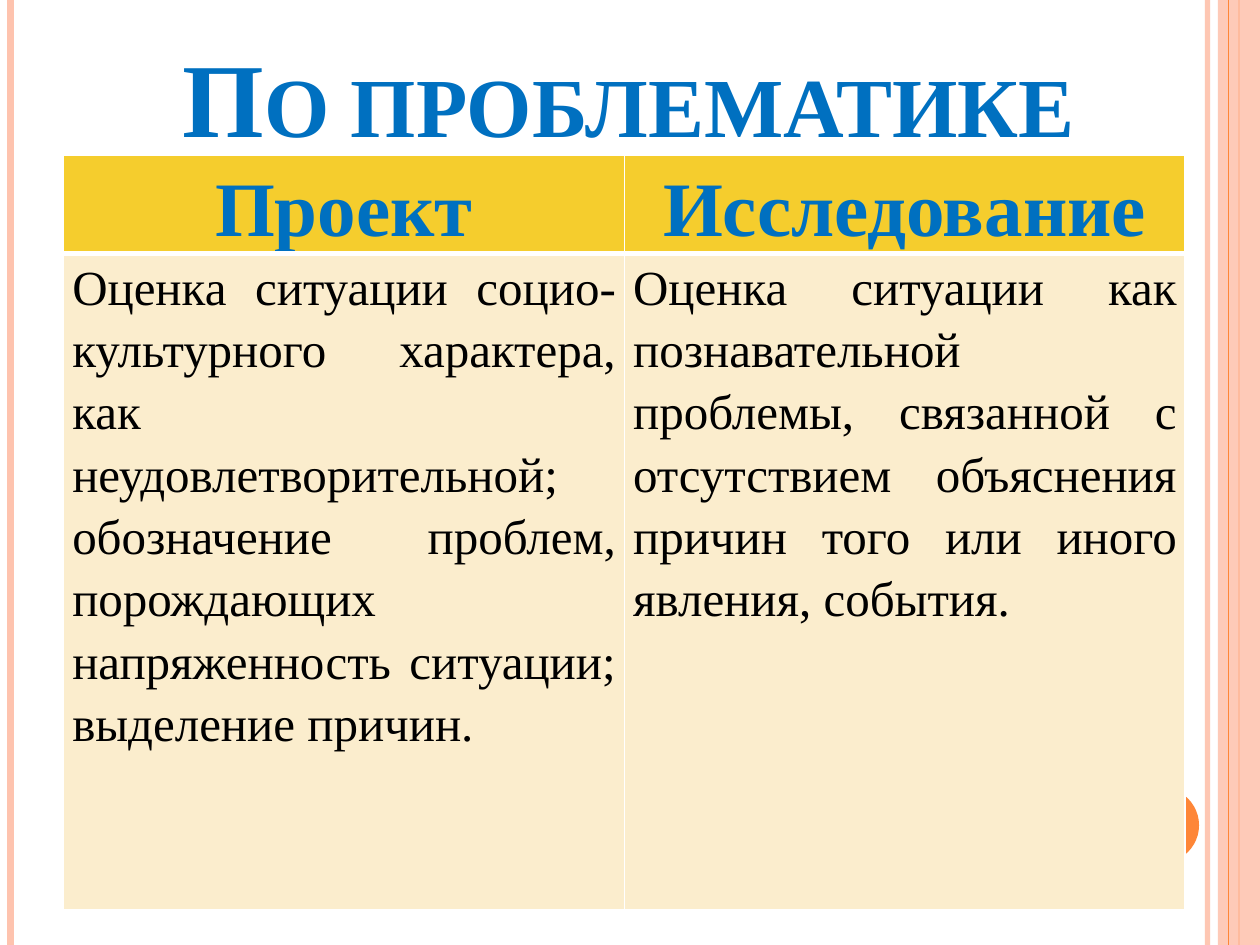
from dataclasses import dataclass

from lxml.etree import SubElement
from pptx import Presentation
from pptx.dml.color import RGBColor
from pptx.enum.shapes import MSO_CONNECTOR, MSO_SHAPE
from pptx.enum.text import MSO_ANCHOR, MSO_AUTO_SIZE, PP_ALIGN
from pptx.oxml import parse_xml
from pptx.oxml.ns import nsdecls, qn
from pptx.util import Pt

WIDTH, HEIGHT = 720, 540


@dataclass(frozen=True)
class Theme:
    font: str = "Times New Roman"
    heading: str = "0070C0"
    body: str = "000000"
    peach: str = "FEC3AE"
    orange: str = "FE8637"
    header_fill: str = "F5CD2D"
    body_fill: str = "FBEDCD"
    border: str = "FFFFFF"
    title_size: int = 60
    header_size: int = 44
    body_size: int = 28


def set_opacity(element, percent):
    color = element.find(".//" + qn("a:srgbClr"))
    SubElement(color, qn("a:alpha"), val=str(percent * 1000))


class SlideBuilder:
    def __init__(self, slide, theme):
        self.slide = slide
        self.theme = theme

    def style_runs(self, paragraph, size, color, bold):
        for run in paragraph.runs:
            run.font.name = self.theme.font
            run.font.size = Pt(size)
            run.font.bold = bold
            run.font.color.rgb = RGBColor.from_string(color)

    def vertical_line(self, x, color, width, opacity=100):
        line = self.slide.shapes.add_connector(
            MSO_CONNECTOR.STRAIGHT, Pt(x), 0, Pt(x), Pt(HEIGHT))
        line.line.color.rgb = RGBColor.from_string(color)
        line.line.width = Pt(width)
        properties = line._element.spPr
        if opacity < 100:
            set_opacity(properties, opacity)
        SubElement(properties, qn("a:effectLst"))

    def solid(self, kind, left, top, width, height, color, opacity=100):
        shape = self.slide.shapes.add_shape(
            kind, Pt(left), Pt(top), Pt(width), Pt(height))
        shape.shadow.inherit = False
        shape.fill.solid()
        shape.fill.fore_color.rgb = RGBColor.from_string(color)
        shape.line.fill.background()
        if opacity < 100:
            set_opacity(shape._element.spPr, opacity)

    def title(self, text, left, top, width, height):
        """Fill the title placeholder and bring it above the decoration."""
        title = self.slide.shapes.title
        self.slide.shapes._spTree.append(title._element)
        title.left, title.top = Pt(left), Pt(top)
        title.width, title.height = Pt(width), Pt(height)
        frame = title.text_frame
        frame.text = text
        frame.word_wrap = True
        frame.auto_size = MSO_AUTO_SIZE.NONE
        frame.vertical_anchor = MSO_ANCHOR.BOTTOM
        paragraph = frame.paragraphs[0]
        paragraph.alignment = PP_ALIGN.CENTER
        self.style_runs(paragraph, self.theme.title_size, self.theme.heading, True)
        for run in paragraph.runs:
            run.font._element.set("cap", "small")

    def cell(self, cell, text, is_header):
        theme = self.theme
        cell.margin_left = cell.margin_right = Pt(5)
        cell.margin_top = cell.margin_bottom = 0
        cell.text_frame.text = text
        paragraph = cell.text_frame.paragraphs[0]
        paragraph.line_spacing = 1.15
        if is_header:
            paragraph.alignment = PP_ALIGN.CENTER
            self.style_runs(paragraph, theme.header_size, theme.heading, True)
        else:
            paragraph.alignment = PP_ALIGN.JUSTIFY
            self.style_runs(paragraph, theme.body_size, theme.body, False)
        top, bottom = (1, 3) if is_header else (3, 1)
        for side, width in {"L": 1, "R": 1, "T": top, "B": bottom}.items():
            cell._tc.get_or_add_tcPr().append(parse_xml(
                f'<a:ln{side} {nsdecls("a")} w="{Pt(width)}"><a:solidFill>'
                f'<a:srgbClr val="{theme.border}"/></a:solidFill></a:ln{side}>'))
        cell.fill.solid()
        cell.fill.fore_color.rgb = RGBColor.from_string(
            theme.header_fill if is_header else theme.body_fill)

    def table(self, rows, left, top, width, row_heights):
        table = self.slide.shapes.add_table(
            len(rows), len(rows[0]), Pt(left), Pt(top),
            Pt(width), Pt(sum(row_heights))).table
        for row, height in zip(table.rows, row_heights):
            row.height = Pt(height)
        for r, texts in enumerate(rows):
            for c, text in enumerate(texts):
                self.cell(table.cell(r, c), text, is_header=r == 0)


COMPARISON = [
    ("Проект", "Исследование"),
    ("Оценка ситуации социо-культурного характера, как неудовлетворительной; "
     "обозначение проблем, порождающих напряженность ситуации; "
     "выделение причин.",
     "Оценка ситуации как познавательной проблемы, связанной с отсутствием "
     "объяснения причин того или иного явления, события."),
]


def main():
    presentation = Presentation()
    presentation.slide_width, presentation.slide_height = Pt(WIDTH), Pt(HEIGHT)
    theme = Theme()
    slide = presentation.slides.add_slide(presentation.slide_layouts[5])
    builder = SlideBuilder(slide, theme)

    builder.vertical_line(690, theme.peach, 3, opacity=93)
    builder.vertical_line(6, theme.peach, 4.5)
    builder.vertical_line(708, theme.orange, 1.5)
    builder.solid(MSO_SHAPE.RECTANGLE, 696, 0, 24, HEIGHT, theme.peach, opacity=87)
    builder.vertical_line(702, theme.orange, 0.75)
    builder.solid(MSO_SHAPE.OVAL, 642, 450, 43.2, 43.2, theme.orange)

    builder.title("По проблематике", 36, 15, 647, 79)
    builder.table(COMPARISON, 36.3, 88.8, 641, row_heights=(44.6, 375))
    presentation.save("out.pptx")


if __name__ == "__main__":
    main()
